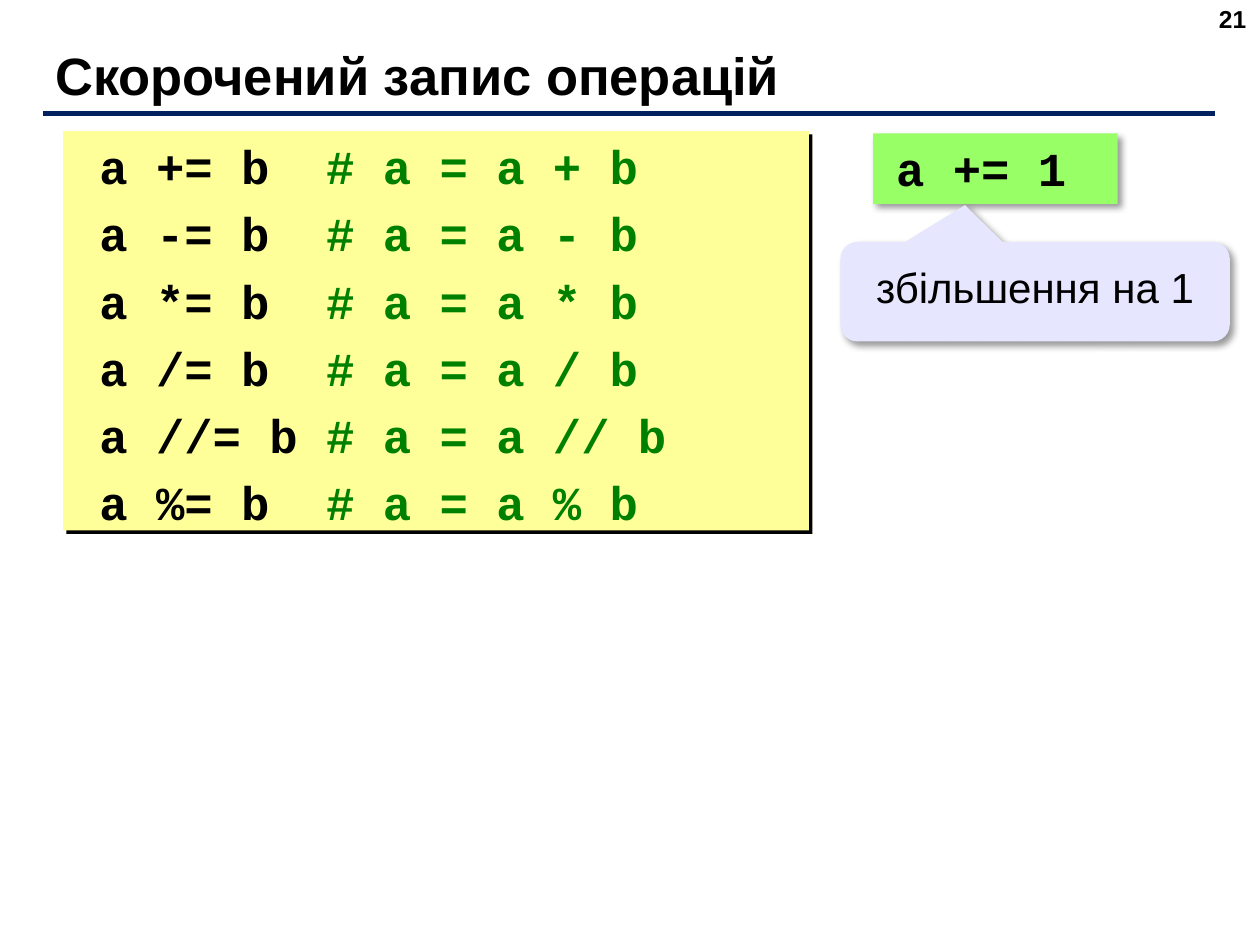
from dataclasses import dataclass

from lxml.etree import SubElement as Sub
from pptx import Presentation
from pptx.dml.color import RGBColor as RGB
from pptx.enum.shapes import MSO_CONNECTOR as Conn, MSO_SHAPE as Kind
from pptx.enum.text import MSO_ANCHOR as Anchor, PP_ALIGN as Align
from pptx.oxml.ns import qn
from pptx.util import Inches, Pt


@dataclass(frozen=True)
class Theme:
    ink: str = "000000"
    note: str = "008000"
    rule: str = "002060"
    yellow: str = "FFFF99"
    green: str = "99FF66"
    lilac: str = "E6E6FF"
    sans: str = "Arial"
    mono: str = "Courier New"
    head: int = 30
    code: int = 27
    body: int = 24
    page: int = 14
    hard: tuple = (100, 0, 2.8)  # shadow: opacity, blur, distance
    soft: tuple = (40, 4, 3)


class Deck:
    def __init__(self, theme):
        self.theme = theme
        self.prs = Presentation()
        self.prs.slide_width, self.prs.slide_height = Inches(10), Inches(7.5)
        self.slide = self.prs.slides.add_slide(self.prs.slide_layouts[6])

    def fill_text(self, shape, lines, size, font, bold=True, frame=None, para=None, indent=0):
        """Each line is a list of (text, colour) runs."""
        box = shape.text_frame
        look = {"word_wrap": True, "vertical_anchor": Anchor.TOP, **(frame or {})}
        for key, value in look.items():
            setattr(box, key, value)
        for i, line in enumerate(lines):
            par = box.add_paragraph() if i else box.paragraphs[0]
            for key, value in {"alignment": Align.LEFT, **(para or {})}.items():
                setattr(par, key, value)
            if indent:
                par._p.get_or_add_pPr().set("marL", str(Inches(indent)))
            for text, color in line:
                run = par.add_run()
                run.text = text
                form = {"name": font, "size": Pt(size), "bold": bold}
                for key, value in form.items():
                    setattr(run.font, key, value)
                run.font.color.rgb = RGB.from_string(color)

    def label(self, at, text, size, **form):
        shape = self.slide.shapes.add_textbox(*map(Inches, at))
        self.fill_text(shape, [[(text, self.theme.ink)]], size, self.theme.sans, **form)

    def panel(self, kind, at, fill, shade):
        shape = self.slide.shapes.add_shape(kind, *map(Inches, at))
        shape.fill.solid()
        shape.fill.fore_color.rgb = RGB.from_string(fill)
        shape.line.fill.background()
        self.shadow(shape, *shade)
        return shape

    def shadow(self, shape, alpha, blur, dist):
        shape.shadow.inherit = False
        effects = shape._element.spPr.find(qn("a:effectLst"))
        outer = Sub(effects, qn("a:outerShdw"), blurRad=str(Pt(blur)), dist=str(Pt(dist)),
                    dir=str(45 * 60000), algn="tl", rotWithShape="0")
        color = Sub(outer, qn("a:srgbClr"), val=self.theme.ink)
        Sub(color, qn("a:alpha"), val=str(alpha * 1000))

    def rule(self, left, right, y, color, width):
        ends = map(Inches, (left, y, right, y))
        line = self.slide.shapes.add_connector(Conn.STRAIGHT, *ends)
        line.line.color.rgb = RGB.from_string(color)
        line.line.width = Pt(width)
        Sub(line._element.spPr, qn("a:effectLst"))


def main():
    look = Theme()
    deck = Deck(look)

    # Title, page number and rule
    deck.label((0.34, 0.33, 9.16, 0.52), "Скорочений запис операцій", look.head,
               frame={"vertical_anchor": Anchor.MIDDLE})
    deck.label((7.66, -0.02, 2.33, 0.52), "21", look.page, para={"alignment": Align.RIGHT})
    deck.rule(0.34, 9.64, 0.9, look.rule, 3)

    # Short forms with their full meaning
    gap = Pt(6)
    lines = [[(f"a {sign}= b".ljust(8), look.ink), (f"# a = a {sign} b", look.note)]
             for sign in ("+", "-", "*", "/", "//", "%")]
    board = deck.panel(Kind.RECTANGLE, (0.5, 1.04, 5.92, 3.17), look.yellow, look.hard)
    deck.fill_text(board, lines, look.code, look.mono, para={"space_before": gap}, indent=0.19)

    # Example of an increment
    card = deck.panel(Kind.RECTANGLE, (6.93, 1.06, 1.94, 0.56), look.green, look.soft)
    deck.fill_text(card, [[("a += 1 ", look.ink)]], look.code, look.mono,
                   frame={"margin_bottom": 0},
                   para={"alignment": Align.CENTER, "space_before": gap})

    # Callout that explains it
    hint = deck.panel(Kind.ROUNDED_RECTANGULAR_CALLOUT, (6.67, 1.92, 3.09, 0.79),
                      look.lilac, look.soft)
    for i, value in enumerate((-0.18, -0.87, 0.17)):
        hint.adjustments[i] = value
    deck.fill_text(hint, [[("збільшення на 1", look.ink)]], look.body, look.sans, bold=False,
                   frame={"vertical_anchor": Anchor.MIDDLE},
                   para={"alignment": Align.CENTER, "line_spacing": 0.8})

    deck.prs.save("out.pptx")


if __name__ == "__main__":
    main()
